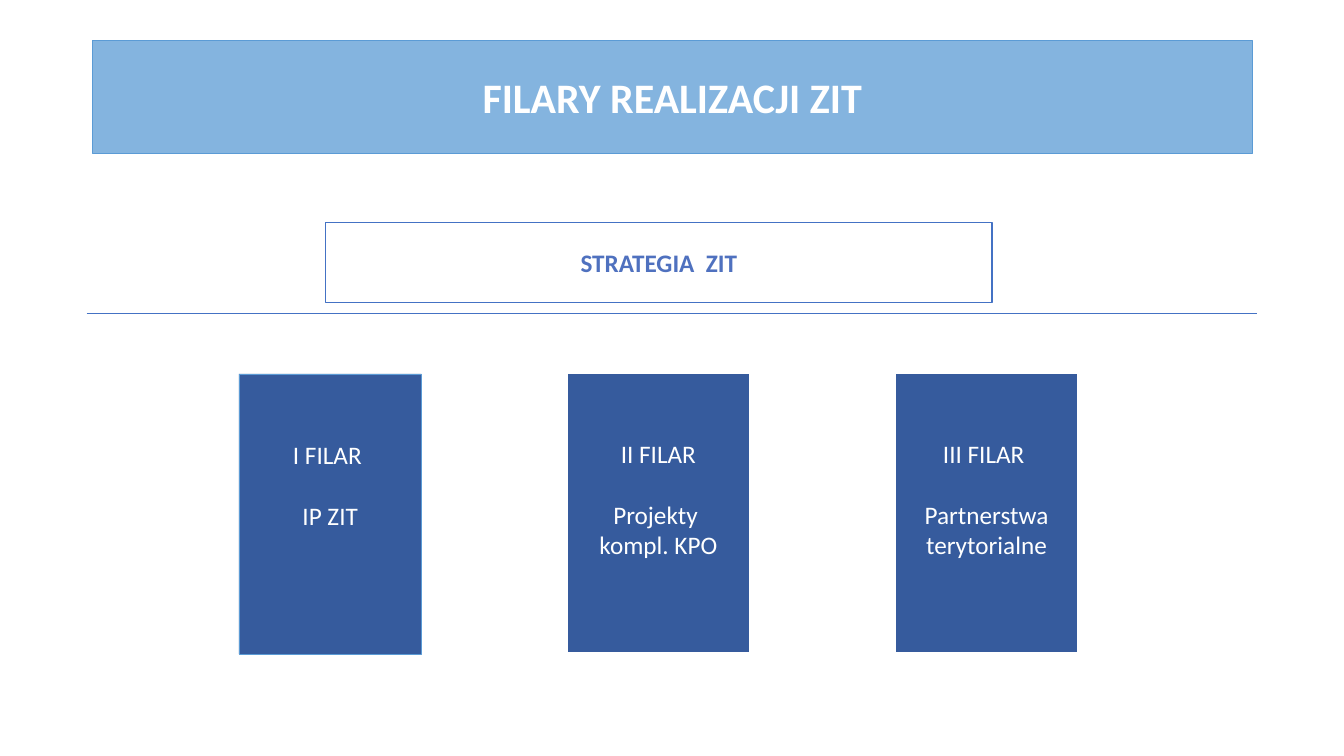
from dataclasses import dataclass

from pptx import Presentation
from pptx.dml.color import RGBColor
from pptx.enum.shapes import MSO_CONNECTOR, MSO_SHAPE
from pptx.enum.text import MSO_ANCHOR, MSO_AUTO_SIZE, PP_ALIGN
from pptx.oxml.ns import qn
from pptx.shapes.autoshape import Shape
from pptx.slide import Slide
from pptx.util import Emu, Pt
from lxml.etree import SubElement

EMU_PER_PX = 9144
FONT = "Calibri"
COLORS = {
    "white": "FFFFFF",
    "banner": "84B4DF",
    "banner_line": "5B9BD5",
    "pillar": "365B9D",
    "strategy_line": "4472C4",
    "strategy_text": "4F71BF",
}
INSET = 5
PILLAR_TOP_INSET = 65
PILLAR_LEFT, PILLAR_STEP = 237, 325.5
PILLAR_WIDTH, PILLAR_HEIGHT = 181, 278


@dataclass(frozen=True)
class BoxStyle:
    fill: str
    line: str
    line_width: float
    text: str
    size: int
    bold: bool = False


@dataclass(frozen=True)
class Pillar:
    top: int
    heading: str
    details: tuple[str, ...]
    line: str
    line_width: float


BANNER = BoxStyle("banner", "banner_line", 0.5, "white", 30, True)
STRATEGY = BoxStyle("white", "strategy_line", 1, "strategy_text", 18, True)
PILLARS = [
    Pillar(371, "I FILAR ", ("IP ZIT",), "banner_line", 0.5),
    Pillar(370, "II FILAR", ("Projekty ", "kompl. KPO"), "white", 1.5),
    Pillar(370, "III FILAR ", ("Partnerstwa terytorialne",), "white", 1.5),
]


def px(value: float) -> Emu:
    return Emu(round(value * EMU_PER_PX))


def color(name: str) -> RGBColor:
    return RGBColor.from_string(COLORS[name])


def style_box(shape: Shape, style: BoxStyle, lines: tuple[str, ...]) -> None:
    """Fill and outline a box, then write its centred paragraphs."""
    shape.shadow.inherit = False
    shape.fill.solid()
    shape.fill.fore_color.rgb = color(style.fill)
    shape.line.color.rgb = color(style.line)
    shape.line.width = Pt(style.line_width)

    frame = shape.text_frame
    frame.word_wrap = True
    frame.auto_size = MSO_AUTO_SIZE.NONE
    frame.vertical_anchor = MSO_ANCHOR.MIDDLE
    frame.margin_left = frame.margin_right = px(INSET)
    frame.margin_top = frame.margin_bottom = px(INSET)
    frame.text = "\n".join(lines)
    for paragraph in frame.paragraphs:
        paragraph.alignment = PP_ALIGN.CENTER
        paragraph.font.name = FONT
        paragraph.font.size = Pt(style.size)
        paragraph.font.bold = style.bold
        paragraph.font.color.rgb = color(style.text)


def add_box(slide: Slide, left: float, top: int, width: int, height: int) -> Shape:
    return slide.shapes.add_shape(
        MSO_SHAPE.RECTANGLE, px(left), px(top), px(width), px(height)
    )


def add_title(slide: Slide) -> None:
    title = slide.shapes.title
    title.left, title.top = px(92), px(40)
    title.width, title.height = px(1150), px(112)
    style_box(title, BANNER, ("FILARY REALIZACJI ZIT",))


def add_pillar(slide: Slide, index: int, pillar: Pillar) -> None:
    left = PILLAR_LEFT + index * PILLAR_STEP
    shape = add_box(slide, left, pillar.top, PILLAR_WIDTH, PILLAR_HEIGHT)
    style = BoxStyle("pillar", pillar.line, pillar.line_width, "white", 18)
    style_box(shape, style, (pillar.heading, *pillar.details))
    frame = shape.text_frame
    frame.vertical_anchor = MSO_ANCHOR.TOP
    frame.margin_top = px(PILLAR_TOP_INSET)
    frame.paragraphs[1].space_before = Pt(22)


def add_divider(slide: Slide) -> None:
    divider = slide.shapes.add_connector(
        MSO_CONNECTOR.STRAIGHT, px(86), px(311), px(1247), px(311)
    )
    divider.line.color.rgb = color("strategy_line")
    divider.line.width = Pt(1)
    SubElement(divider._element.spPr, qn("a:effectLst"))


def main() -> None:
    presentation = Presentation()
    presentation.slide_width, presentation.slide_height = px(1333), px(750)
    slide = presentation.slides.add_slide(presentation.slide_layouts[5])

    # Title banner
    add_title(slide)

    # Three pillars
    for index, pillar in enumerate(PILLARS):
        add_pillar(slide, index, pillar)

    # Strategy box resting on the divider
    style_box(add_box(slide, 323, 221, 661, 79), STRATEGY, ("STRATEGIA  ZIT",))
    add_divider(slide)

    presentation.save("out.pptx")


if __name__ == "__main__":
    main()
